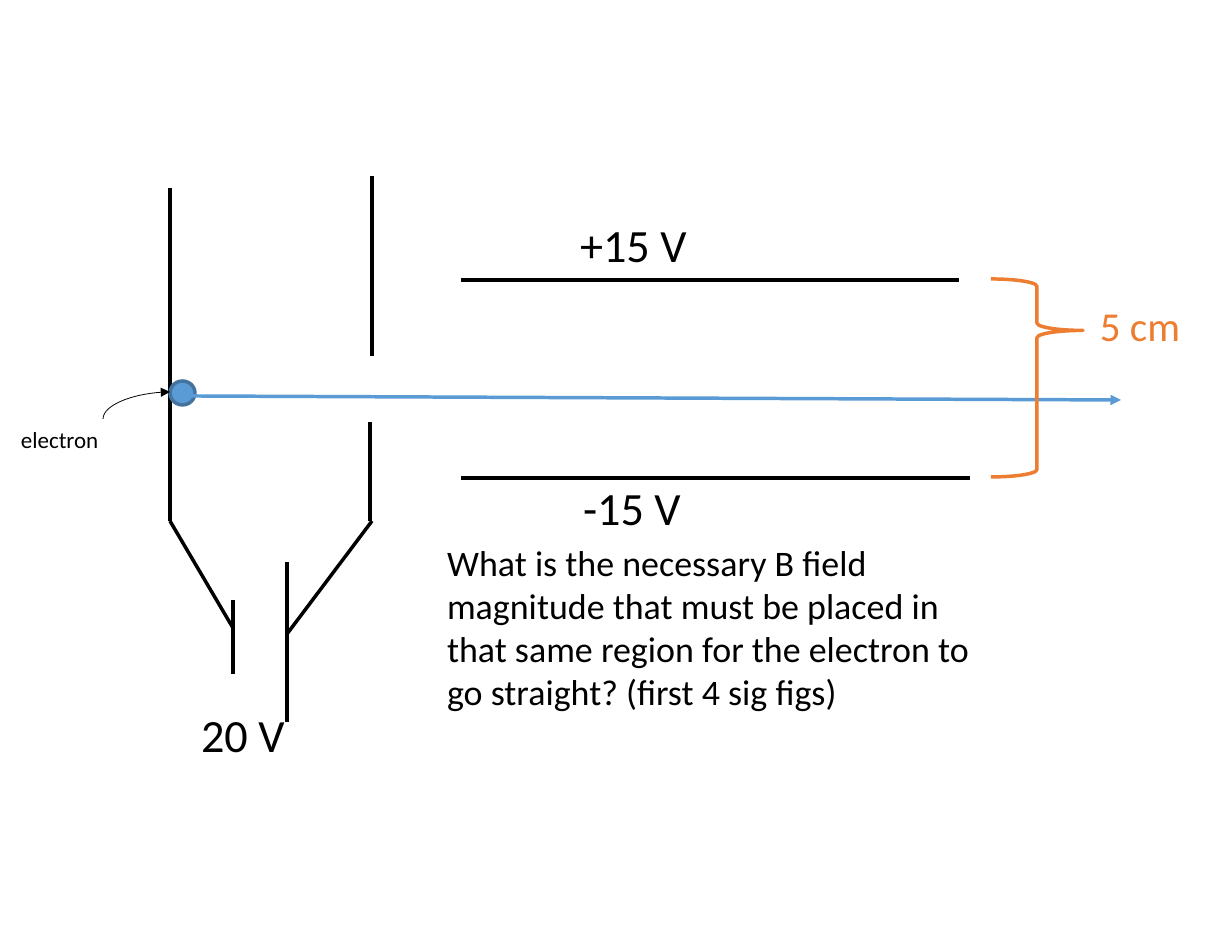
"""Builds the slide about an electron crossing charged plates."""
from lxml import etree
from pptx import Presentation
from pptx import util as u
from pptx.dml.color import RGBColor
from pptx.enum import shapes, text
from pptx.oxml import ns

PX = u.Inches(1) / 112
BLACK = RGBColor(0x00, 0x00, 0x00)
BLUE = RGBColor(0x5B, 0x9B, 0xD5)
DARK_BLUE = RGBColor(0x43, 0x73, 0x9E)
ORANGE = RGBColor(0xED, 0x7D, 0x31)

WIRES = [
    (170, 188, 170, 521),
    (372, 176, 372, 356),
    (370, 422, 370, 521),
    (461, 280, 959, 280),
    (461, 478, 970, 478),
    (233, 600, 233, 674),
    (287, 562, 287, 722),
    (233, 628, 170, 521),
    (287, 634, 372, 521),
]
LABELS = [
    ("20 V", (190, 701, 120, 67), 29.7, BLACK),
    ("5 cm", (1089, 295, 124, 62), 26.4, ORANGE),
    ("+15 V", (569, 211, 317, 67), 29.7, BLACK),
    ("-15 V", (572, 474, 317, 67), 29.7, BLACK),
    ("What is the necessary B field magnitude that must be placed in that same "
     "region for the electron to go straight? (first 4 sig figs)",
     (436, 535, 550, 186), 23.1, BLACK),
    ("electron", (10, 420, 185, 39), 14.8, BLACK),
]


def px(*lengths):
    """Turn pixel lengths into EMU."""
    return [u.Emu(round(length * PX)) for length in lengths]


def add_line(slide, ends, color=BLACK, width=2.25, arrow=False,
             kind=shapes.MSO_CONNECTOR.STRAIGHT):
    """Add a connector, with an arrowhead at its end if wanted."""
    connector = slide.shapes.add_connector(kind, *px(*ends))
    connector.line.color.rgb = color
    connector.line.width = u.Pt(width)
    if arrow:
        etree.SubElement(connector.line._get_or_add_ln(), ns.qn("a:tailEnd"), type="triangle")
    etree.SubElement(connector._element.spPr, ns.qn("a:effectLst"))
    return connector


def add_pointer(slide, ends):
    """Add a quarter-turn curved arrow, rotated to leave its start upwards."""
    pointer = add_line(slide, ends, width=0.5, arrow=True, kind=shapes.MSO_CONNECTOR.CURVE)
    properties = pointer._element.spPr
    properties.find(ns.qn("a:xfrm")).set("rot", str(90 * 60000))
    properties.find(ns.qn("a:prstGeom")).set("prst", "curvedConnector2")


def add_outline(slide, kind, box, color, fill=None):
    """Add a preset shape with an outline and an optional fill."""
    shape = slide.shapes.add_shape(kind, *px(*box))
    shape.shadow.inherit = False
    shape.line.color.rgb = color
    shape.line.width = u.Pt(2.25)
    if fill is None:
        shape.fill.background()
    else:
        shape.fill.solid()
        shape.fill.fore_color.rgb = fill
    return shape


def add_label(slide, words, box, size, color):
    """Add a wrapped text box in one format."""
    frame = slide.shapes.add_textbox(*px(*box)).text_frame
    frame.word_wrap = True
    frame.auto_size = text.MSO_AUTO_SIZE.SHAPE_TO_FIT_TEXT
    frame.text = words
    font = frame.paragraphs[0].runs[0].font
    font.name = "Calibri"
    font.size = u.Pt(size)
    font.color.rgb = color


def main():
    """Build and save the slide."""
    presentation = Presentation()
    presentation.slide_width, presentation.slide_height = u.Inches(11), u.Inches(8.5)
    slide = presentation.slides.add_slide(presentation.slide_layouts[6])
    for ends in WIRES:
        add_line(slide, ends)
    add_outline(slide, shapes.MSO_SHAPE.OVAL, (170, 381, 25, 24), DARK_BLUE, BLUE)
    add_line(slide, (192, 396, 1121, 400), BLUE, arrow=True)
    brace = add_outline(slide, shapes.MSO_SHAPE.RIGHT_BRACE, (991, 279, 92, 198), ORANGE)
    brace.adjustments[0] = 0.08
    brace.adjustments[1] = 0.26
    for label in LABELS:
        add_label(slide, *label)
    add_pointer(slide, (150, 439, 123, 372))
    presentation.save("out.pptx")


if __name__ == "__main__":
    main()
